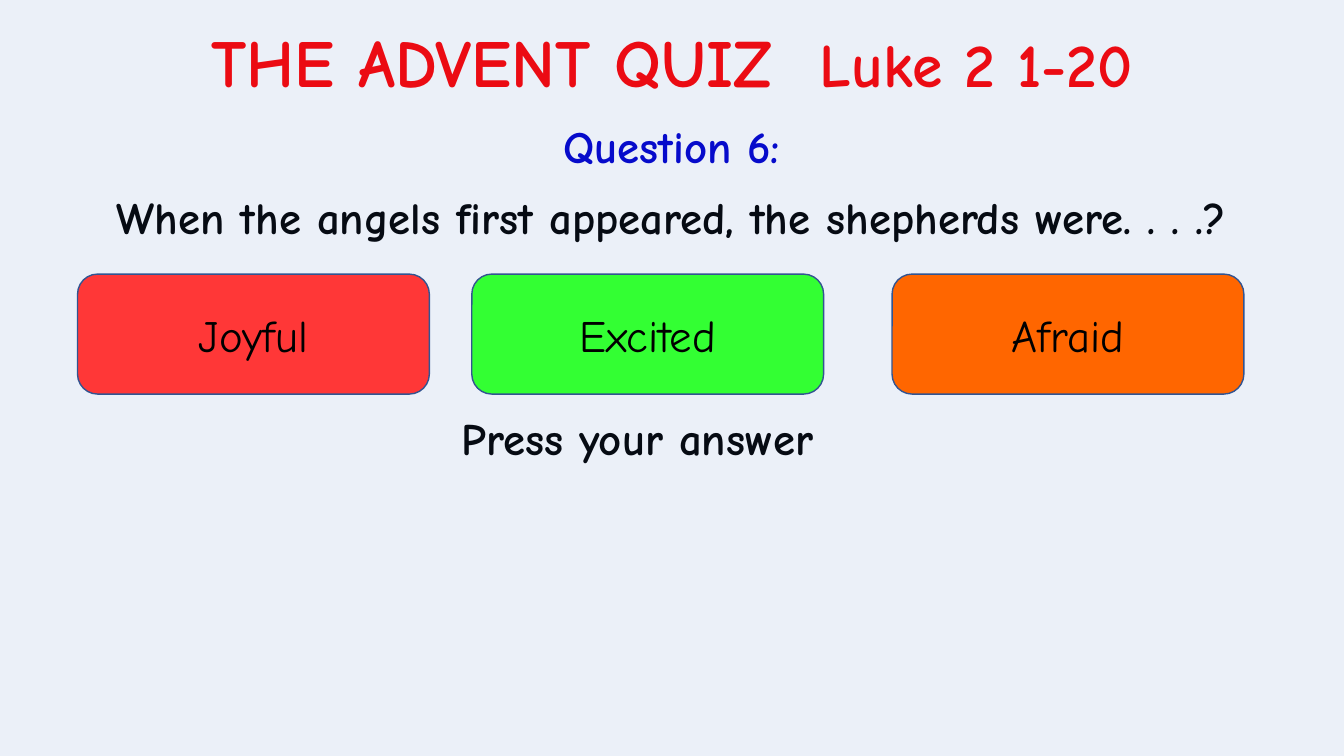
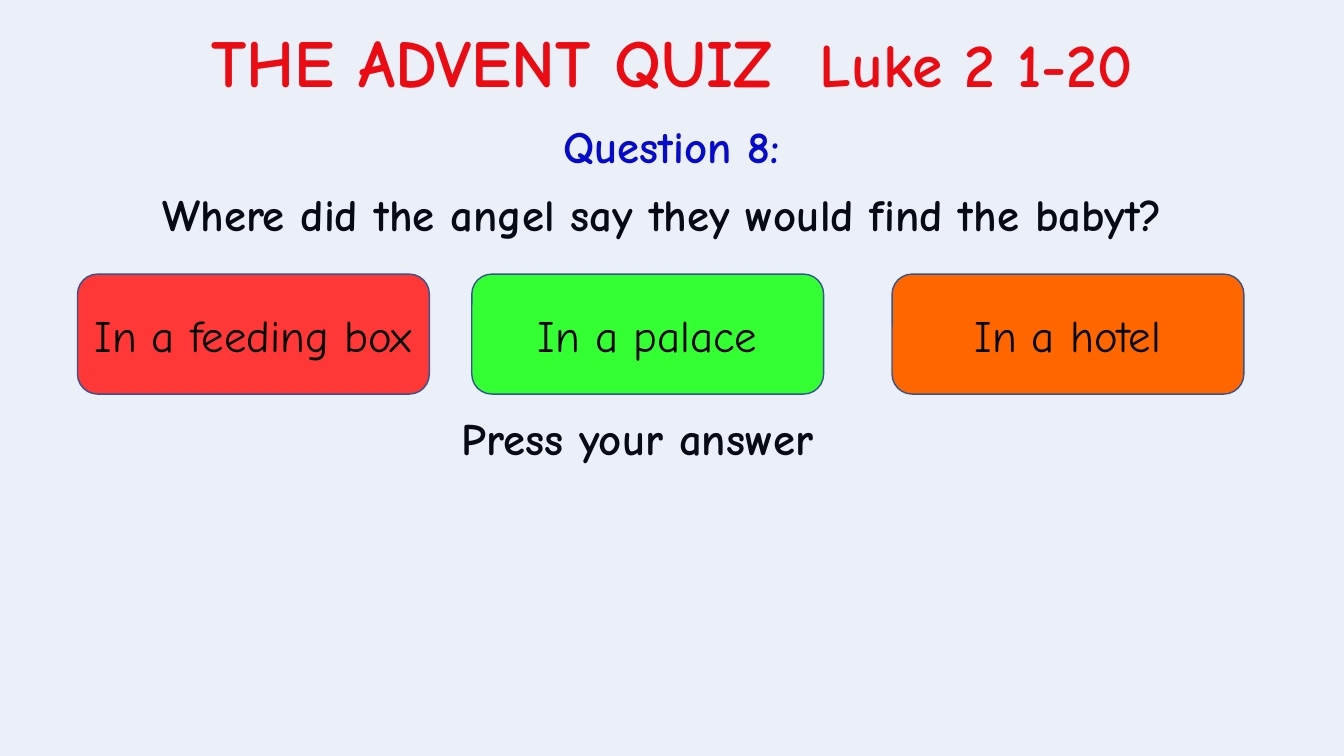
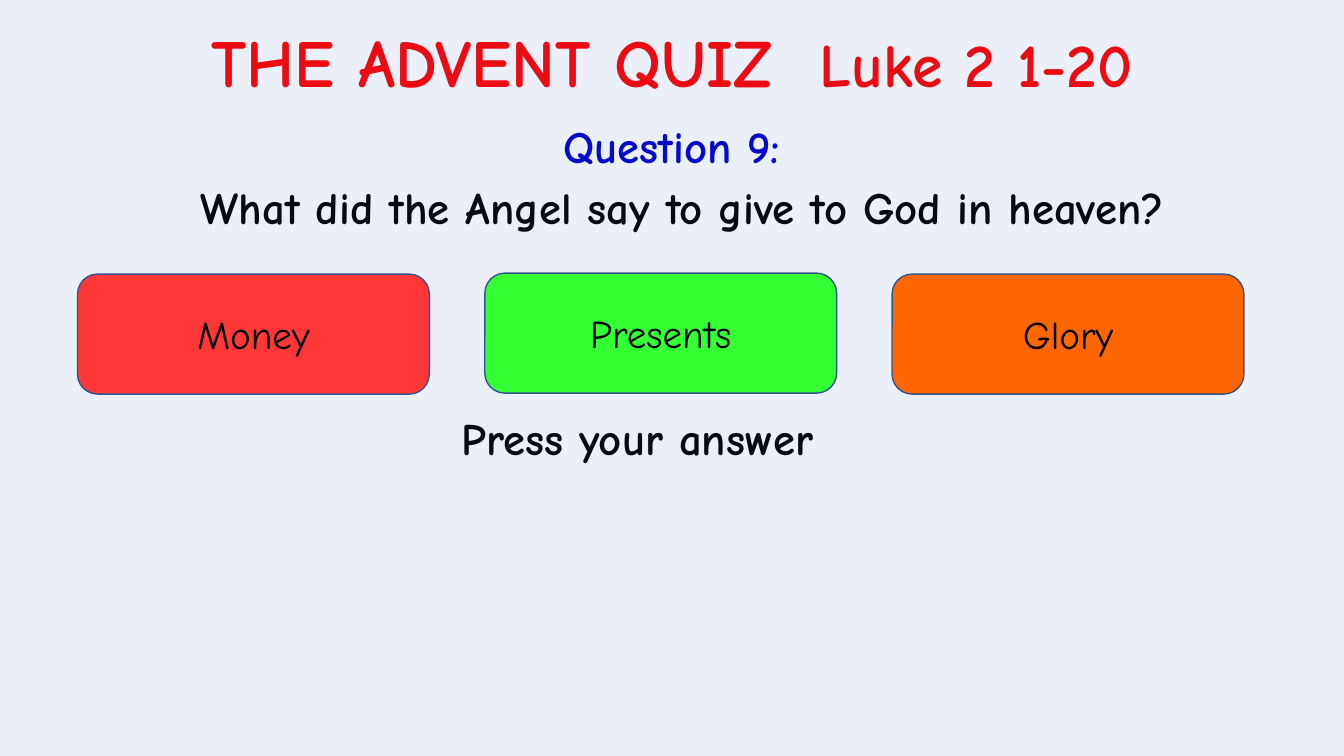
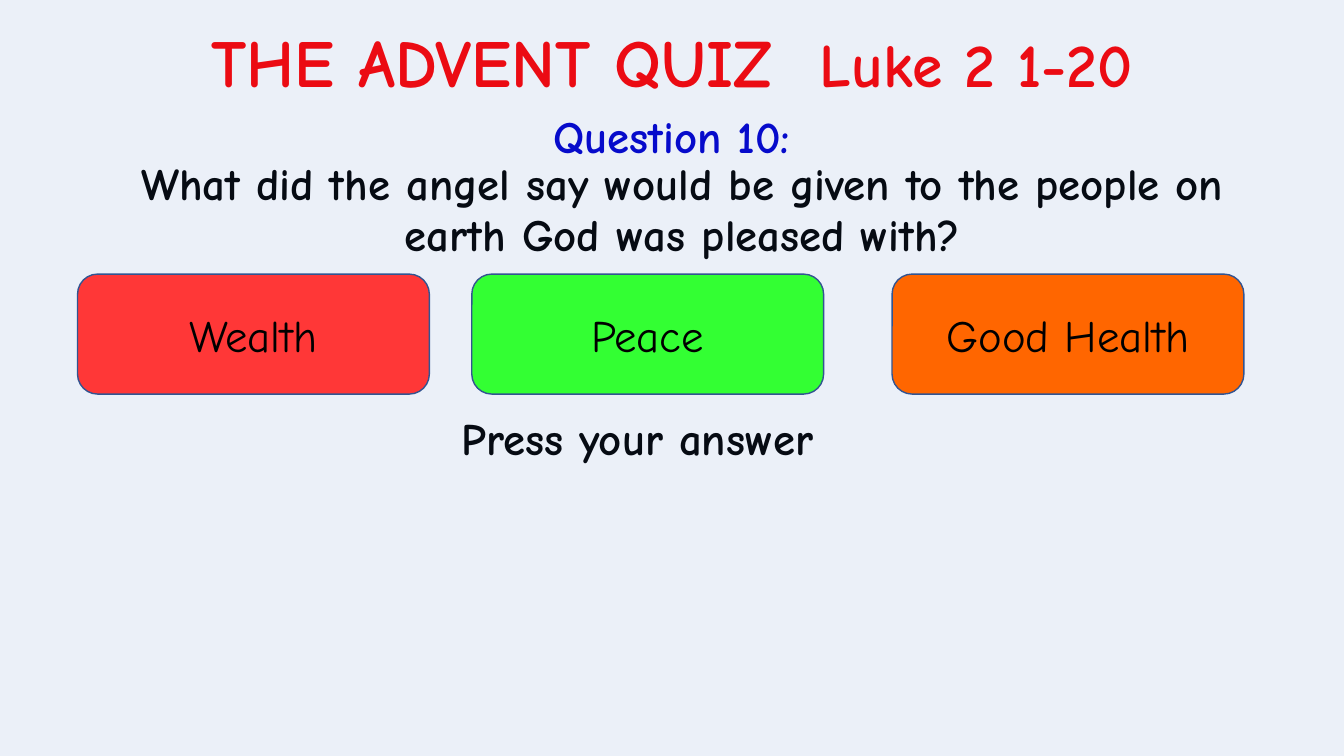
"""Build four Advent quiz slides, each with a question and three answer buttons."""
from lxml.etree import SubElement
from pptx import Presentation
from pptx.dml.color import RGBColor
from pptx.enum.shapes import MSO_SHAPE
from pptx.enum.text import MSO_ANCHOR, PP_ALIGN
from pptx.oxml.ns import qn
from pptx.util import Pt

FONT = "Comic Neue"
BLACK = RGBColor(0x00, 0x00, 0x00)
RED = RGBColor(0xFF, 0x00, 0x00)
NAVY = RGBColor(0x00, 0x00, 0xCC)
TINT = RGBColor(0x44, 0x72, 0xC4)
EDGE = RGBColor(0x32, 0x54, 0x91)
FILLS = [RGBColor(0xFF, 0x37, 0x37), RGBColor(0x33, 0xFF, 0x33), RGBColor(0xFF, 0x66, 0x00)]
WIDTH, HEIGHT = 960, 540

QUIZ = [
    dict(num=6, ask="When the angels first appeared, the shepherds were. . . .?",
         box=(-9.4, 140.4, 979.2), lead=30, head=81.4, mid=(337, 195.8), size=32,
         picks=["Joyful", "Excited", "Afraid"]),
    dict(num=8, ask="Where did the angel say they would find the babyt?",
         box=(41.8, 132.5, 863.3), lead=36, head=81.4, mid=(337, 195.8), size=32,
         picks=["In a feeding box", "In a palace", "In a hotel"]),
    dict(num=9, ask="What did the Angel say to give to God in heaven?",
         box=(71.3, 127.4, 833), lead=36, head=81.4, mid=(346.3, 195.1), size=28,
         picks=["Money", "Presents", "Glory"]),
    dict(num=10, ask="What did the angel say would be given to the people on earth God was pleased with?",
         box=(71.3, 110.2, 833), lead=36, head=74.2, mid=(337, 195.8), size=32,
         picks=["Wealth", "Peace", "Good Health"]),
]


def style(para, size, color, bold=True, align=PP_ALIGN.CENTER):
    para.alignment = align
    para.font.name = FONT
    para.font.size = Pt(size)
    para.font.bold = bold
    para.font.color.rgb = color


def label(slide, box, text, size, color, align=PP_ALIGN.CENTER):
    frame = slide.shapes.add_textbox(*map(Pt, box)).text_frame
    frame.word_wrap = True
    para = frame.paragraphs[0]
    para.text = text
    style(para, size, color, align=align)
    return para


deck = Presentation()
deck.slide_width, deck.slide_height = Pt(WIDTH), Pt(HEIGHT)

for item in QUIZ:
    slide = deck.slides.add_slide(deck.slide_layouts[6])

    title = label(slide, (72, 10.8, 816, 65.5), "THE ADVENT QUIZ  ", 48, RED)
    verse = title.add_run()
    verse.text = "Luke 2 1-20"
    verse.font.size = Pt(44)

    ask = label(slide, (*item["box"], 85.7), item["ask"], 32, BLACK)
    ask.line_spacing = Pt(item["lead"])
    ask.space_before = Pt(10)

    press = label(slide, (322.6, 294.5, 484.6, 51.8), "Press your answer", 32, BLACK, PP_ALIGN.LEFT)
    press.line_spacing = 0.9
    press.space_before = Pt(7.5)

    label(slide, (321.1, item["head"], 317.5, 46.1), f"Question {item['num']}:", 32, NAVY)

    veil = slide.shapes.add_shape(MSO_SHAPE.RECTANGLE, 0, 0, Pt(WIDTH), Pt(HEIGHT))
    veil.shadow.inherit = False
    veil.fill.solid()
    veil.fill.fore_color.rgb = TINT
    tone = veil.fill._xPr.find(qn("a:solidFill"))[0]
    SubElement(tone, qn("a:alpha")).set("val", "10000")
    veil.line.fill.background()

    spots = [(55.4, 195.8), item["mid"], (637.2, 195.8)]
    for (left, top), fill, pick in zip(spots, FILLS, item["picks"]):
        button = slide.shapes.add_shape(MSO_SHAPE.ROUNDED_RECTANGLE, Pt(left), Pt(top), Pt(251.3), Pt(85.7))
        button.shadow.inherit = False
        button.fill.solid()
        button.fill.fore_color.rgb = fill
        button.line.color.rgb = EDGE
        button.line.width = Pt(1)
        frame = button.text_frame
        frame.word_wrap = True
        frame.vertical_anchor = MSO_ANCHOR.MIDDLE
        frame.text = pick
        style(frame.paragraphs[0], item["size"], BLACK, bold=False)

deck.save("out.pptx")
